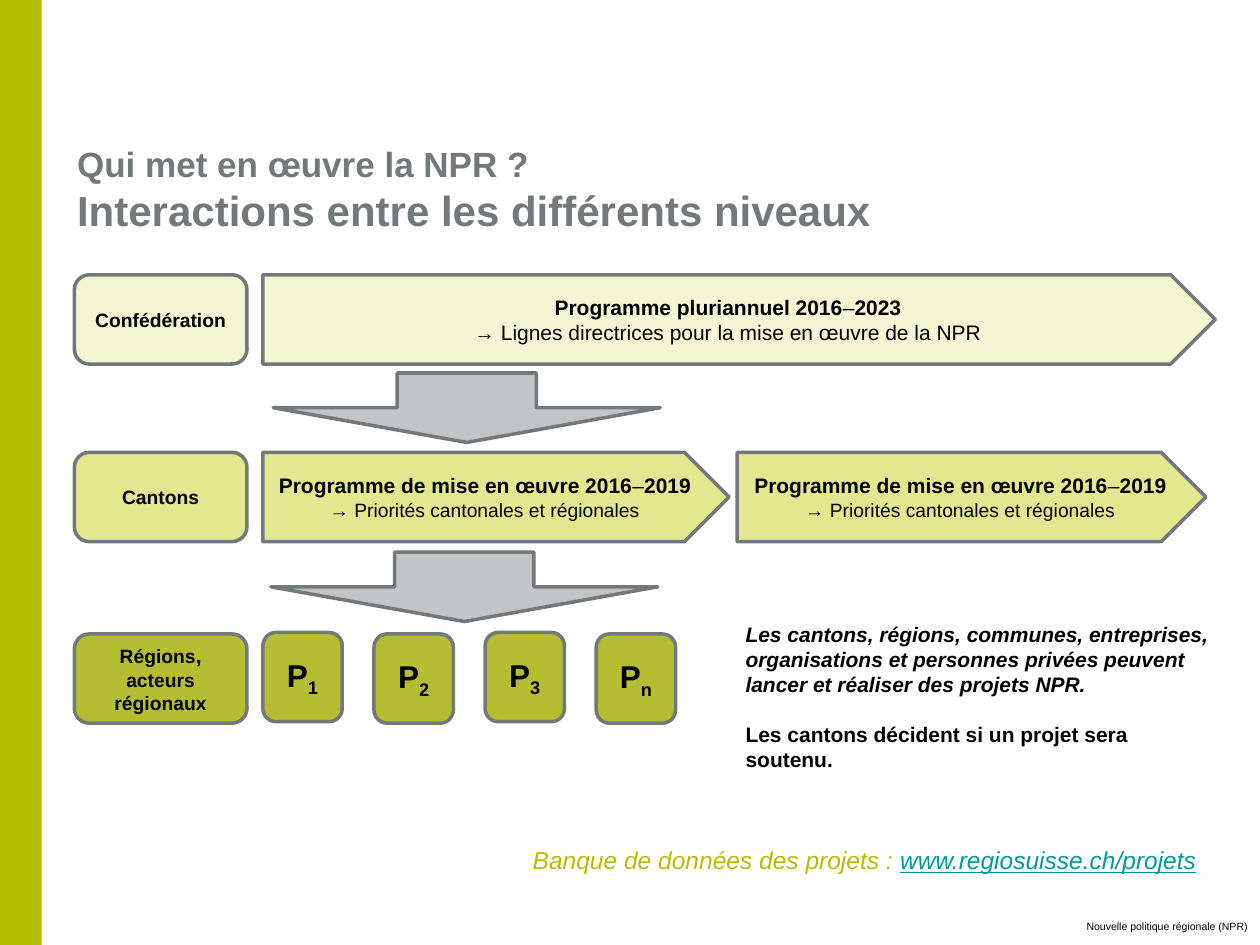
from pptx import Presentation
from pptx.dml.color import RGBColor
from pptx.enum.shapes import MSO_SHAPE
from pptx.enum.text import MSO_ANCHOR, MSO_AUTO_SIZE, PP_ALIGN
from pptx.util import Cm, Pt

RECT, ROUND = MSO_SHAPE.RECTANGLE, MSO_SHAPE.ROUNDED_RECTANGLE
PLATE, DOWN = MSO_SHAPE.PENTAGON, MSO_SHAPE.DOWN_ARROW
LEFT, MID, RIGHT = PP_ALIGN.LEFT, PP_ALIGN.CENTER, PP_ALIGN.RIGHT

COLORS = {
    "lime": "B4BE00", "gray": "73787B", "silver": "C2C4C6", "black": "000000",
    "pale": "F3F6D2", "soft": "E2E890", "deep": "B4BE30", "teal": "009999",
}


def tint(name):
    return RGBColor.from_string(COLORS[name])


def write(par, text, size=12, bold=False, italic=False, ink="black",
          align=MID, under=False, base=0):
    """Append a run to a paragraph; base is the offset in percent of the size."""
    par.alignment = align
    run = par.add_run()
    run.text = text
    font = run.font
    font.name, font.size = "Arial", Pt(size)
    font.bold, font.italic, font.underline = bold, italic, under
    font.color.rgb = tint(ink)
    if base:
        run._r.get_or_add_rPr().set("baseline", str(base * 1000))


deck = Presentation()
deck.slide_width, deck.slide_height = Cm(25.4), Cm(19.05)
slide = deck.slides.add_slide(deck.slide_layouts[5])

# Title
title = slide.shapes.title
title.left, title.top, title.width, title.height = Cm(1.3), Cm(3), Cm(22.6), Cm(1.6)
frame = title.text_frame
frame.auto_size = MSO_AUTO_SIZE.NONE
frame.vertical_anchor = MSO_ANCHOR.MIDDLE
par = frame.paragraphs[0]
write(par, "Qui met en œuvre la NPR ?", size=20, bold=True, ink="gray", align=LEFT)
par.add_line_break()
write(par, "Interactions entre les différents niveaux", size=24, bold=True,
      ink="gray", align=LEFT)

# Shapes: kind, left, top, width, height, fill, paragraphs of (text, format)
ROWS = (5.54, 9.12, 12.78)
TALL, EDGE = 1.8, 5.3
BOLD = {"bold": True}
label = {"size": 11, "bold": True}
plan = [
    [("Programme de mise en œuvre 2016", BOLD), ("–", {}), ("2019", BOLD)],
    [("→ Priorités cantonales et régionales", {"size": 11})],
]
frame_plan = [
    [("Programme pluriannuel 2016", BOLD), ("–", {}), ("2023", BOLD)],
    [("→ Lignes directrices pour la mise en œuvre de la NPR", {})],
]
shapes = [
    (RECT, 0, 0, 0.84, 19.05, "lime", []),
    (PLATE, EDGE, ROWS[0], 19.2, TALL, "pale", frame_plan),
    (PLATE, EDGE, ROWS[1], 9.4, TALL, "soft", plan),
    (PLATE, 14.86, ROWS[1], 9.45, TALL, "soft", plan),
    (DOWN, 5.51, 7.52, 7.8, 1.4, "silver", []),
    (DOWN, 5.46, 11.13, 7.8, 1.4, "silver", []),
]
levels = [
    ("pale", [("Confédération", label)]),
    ("soft", [("Cantons", label)]),
    ("deep", [("Régions", label), (", ", BOLD), ("acteurs régionaux", label)]),
]
for top, (fill, runs) in zip(ROWS, levels):
    shapes.append((ROUND, 1.5, top, 3.48, TALL, fill, [runs]))
for i, sub in enumerate("123n"):
    runs = [("P", {"size": 18, "bold": True}),
            (sub, {"size": 18, "bold": True, "base": -25})]
    shapes.append((ROUND, EDGE + 2.24 * i, ROWS[2] - 0.03 * (i % 2 == 0),
                   1.6, TALL, "deep", [runs]))

for kind, left, top, wide, high, fill, pars in shapes:
    shape = slide.shapes.add_shape(kind, Cm(left), Cm(top), Cm(wide), Cm(high))
    shape.shadow.inherit = False
    shape.fill.solid()
    shape.fill.fore_color.rgb = tint(fill)
    if kind == RECT:
        shape.line.fill.background()
    else:
        shape.line.color.rgb = tint("gray")
        shape.line.width = Pt(2)
    if kind == DOWN:
        shape.adjustments[0] = 0.36
    frame = shape.text_frame
    frame.word_wrap = True
    frame.vertical_anchor = MSO_ANCHOR.MIDDLE
    for i, runs in enumerate(pars):
        par = frame.add_paragraph() if i else frame.paragraphs[0]
        for text, look in runs:
            write(par, text, **look)

# Free text: left, top, width, height, paragraphs
link = {"size": 14, "italic": True, "align": LEFT}
notes = [
    (14.78, 12.4, 10.06, 3.33, [
        [("Les cantons, régions, communes, entreprises, organisations et "
          "personnes privées peuvent lancer et réaliser des projets NPR.",
          {"bold": True, "italic": True, "align": LEFT})],
        [("Les cantons décident si un projet sera soutenu.",
          {"bold": True, "align": LEFT})],
    ]),
    (10.49, 16.92, 14.22, 0.86, [
        [("Banque de données des projets : ", {**link, "ink": "lime"}),
         ("www.regiosuisse.ch/projets", {**link, "ink": "teal", "under": True})],
    ]),
    (20.9, 18.42, 4.5, 0.6, [
        [("Nouvelle politique régionale (NPR)", {"size": 6, "align": RIGHT})],
    ]),
]
for left, top, wide, high, pars in notes:
    frame = slide.shapes.add_textbox(Cm(left), Cm(top), Cm(wide), Cm(high)).text_frame
    frame.word_wrap = True
    for i, runs in enumerate(pars):
        par = frame.add_paragraph() if i else frame.paragraphs[0]
        if i:
            par.space_before = Pt(14)
        for text, look in runs:
            write(par, text, **look)

deck.save("out.pptx")
